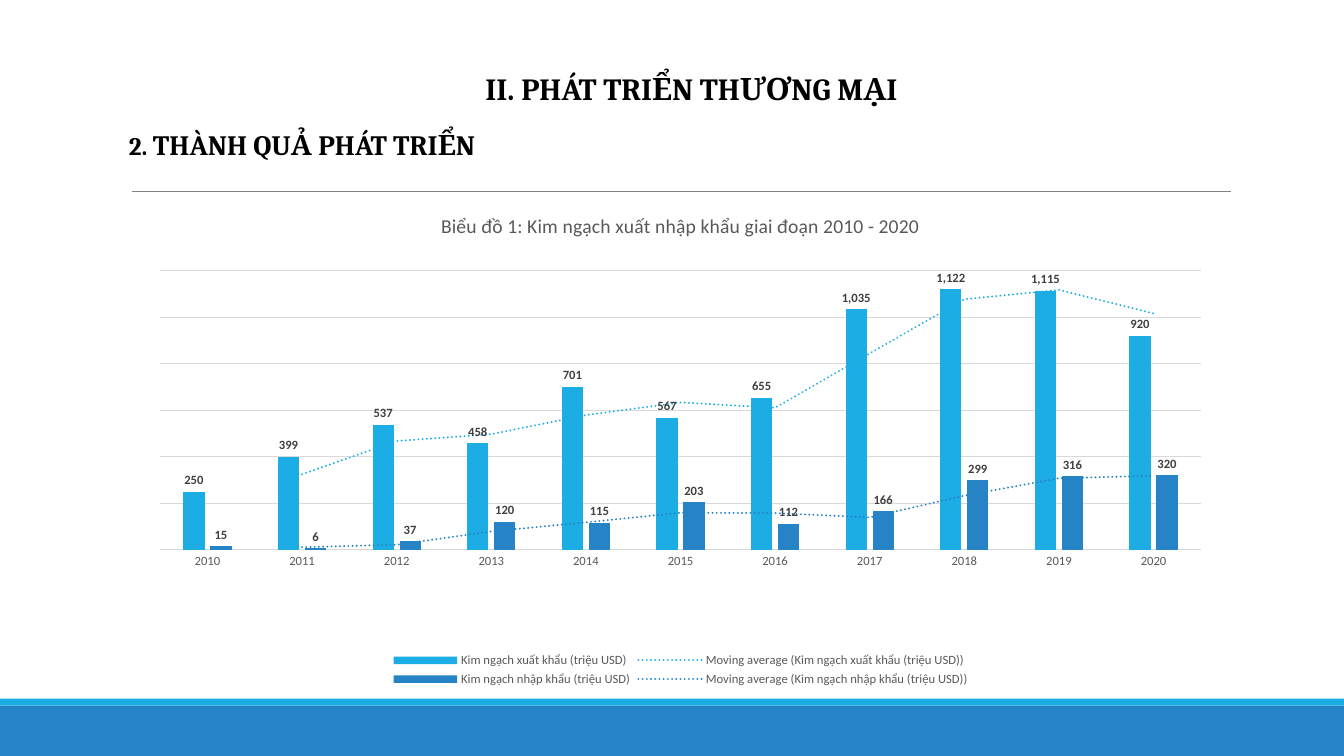
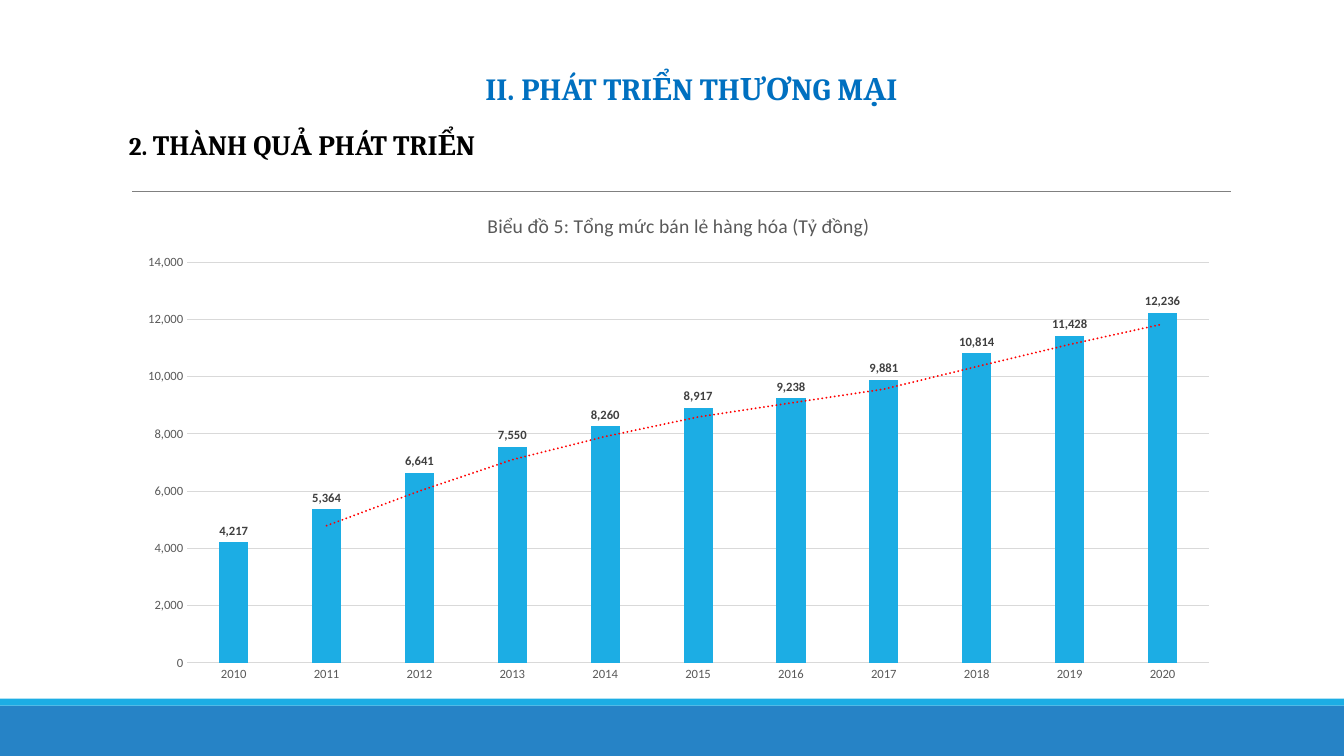
from collections import namedtuple

from lxml import etree
from pptx import Presentation
from pptx.chart.data import CategoryChartData
from pptx.dml.color import RGBColor
from pptx.enum.chart import XL_CHART_TYPE as ChartType
from pptx.enum.chart import XL_LABEL_POSITION as LabelSpot
from pptx.enum.chart import XL_LEGEND_POSITION as LegendSpot
from pptx.enum.chart import XL_TICK_MARK as TickMark
from pptx.enum.shapes import MSO_CONNECTOR as Connector
from pptx.enum.shapes import MSO_SHAPE as Shape
from pptx.enum.text import MSO_AUTO_SIZE as AutoSize
from pptx.enum.text import PP_ALIGN as Align
from pptx.oxml import parse_xml
from pptx.oxml.ns import nsdecls, qn
from pptx.util import Inches, Pt

WIDTH, HEIGHT = Inches(13.33), Inches(7.5)
Box = namedtuple("Box", "left top width height")
COLORS = {
    "black": "000000",
    "heading": "0070C0",
    "light": "1CADE4",
    "dark": "2683C6",
    "red": "FF0000",
    "rule": "808080",
    "grid": "D9D9D9",
    "axis": "595959",
    "label": "404040",
}
YEARS = [str(year) for year in range(2010, 2021)]
AXIS_FONT = {"name": "Calibri", "size": 9, "bold": False, "color": "axis"}
LABEL_FONT = {"name": "Calibri", "size": 9, "bold": True, "color": "label"}
CHART_TITLE_FONT = {"name": "Calibri", "size": 14, "bold": False, "color": "axis"}


def grid_box(left, top, width, height):
    """Turn places on a grid of 100 columns and 100 rows into lengths."""
    column, row = WIDTH / 100, HEIGHT / 100
    return Box(*map(round, (left * column, top * row, width * column, height * row)))


def rgb(name):
    return RGBColor.from_string(COLORS[name])


def style_font(font, style):
    for key, value in style.items():
        if key == "color":
            font.color.rgb = rgb(value)
        else:
            setattr(font, key, Pt(value) if key == "size" else value)


def style_line(line, color, width=0.75):
    line.color.rgb = rgb(color)
    line.width = Pt(width)


def add_band(page, box, color):
    band = page.shapes.add_shape(Shape.RECTANGLE, *box)
    band.shadow.inherit = False
    band.fill.solid()
    band.fill.fore_color.rgb = rgb(color)
    band.line.fill.background()


def add_rule(page, box):
    rule = page.shapes.add_connector(
        Connector.STRAIGHT, box.left, box.top, box.left + box.width, box.top)
    style_line(rule.line, "rule", 0.5)
    etree.SubElement(rule._element.spPr, qn("a:effectLst"))


def add_heading(page, box, spans, color="black", align=Align.LEFT):
    """Write one line of bold Cambria from (text, size) pairs."""
    frame = page.shapes.add_textbox(*box).text_frame
    frame.word_wrap = False
    frame.auto_size = AutoSize.SHAPE_TO_FIT_TEXT
    para = frame.paragraphs[0]
    para.alignment = align
    for text, size in spans:
        span = para.add_run()
        span.text = text
        style_font(span.font, {"name": "Cambria", "size": size, "bold": True, "color": color})


def add_frame(page, title_color):
    """Bands, rule and headings that every page has."""
    add_band(page, grid_box(0, 93.33, 100, 6.67), "dark")
    add_band(page, grid_box(0, 92.4, 100, 0.93), "light")
    add_rule(page, grid_box(9.83, 25.33, 81.77, 0))
    add_heading(page, grid_box(8.85, 16.27, 27.6, 5.87),
                [("2. ", 18), ("THÀNH QUẢ PHÁT TRIỂN", 20)])
    add_heading(page, grid_box(35.18, 8.53, 32.56, 6.27),
                [("II. PHÁT TRIỂN THƯƠNG MẠI", 22)], title_color, Align.CENTER)


def add_trend(series, color):
    """Dotted moving average over two periods, placed before the categories."""
    trend = parse_xml(
        f'<c:trendline {nsdecls("c", "a")}><c:spPr><a:ln w="{Pt(1.5)}" cap="rnd">'
        f'<a:solidFill><a:srgbClr val="{COLORS[color]}"/></a:solidFill>'
        '<a:prstDash val="sysDot"/></a:ln></c:spPr>'
        '<c:trendlineType val="movingAvg"/><c:period val="2"/>'
        '<c:dispRSqr val="0"/><c:dispEq val="0"/></c:trendline>')
    series._element.find(qn("c:cat")).addprevious(trend)


def style_series(series, color, trend_color):
    series.format.fill.solid()
    series.format.fill.fore_color.rgb = rgb(color)
    series.invert_if_negative = False
    labels = series.data_labels
    settings = {"show_value": True, "position": LabelSpot.OUTSIDE_END,
                "number_format": "#,##0", "number_format_is_linked": False}
    for key, value in settings.items():
        setattr(labels, key, value)
    style_font(labels.font, LABEL_FONT)
    add_trend(series, trend_color)


def style_axes(chart, top, step, show_values):
    for axis in (chart.category_axis, chart.value_axis):
        axis.major_tick_mark = axis.minor_tick_mark = TickMark.NONE
        style_font(axis.tick_labels.font, AXIS_FONT)
    style_line(chart.category_axis.format.line, "grid")
    values = chart.value_axis
    values.visible = show_values
    values.minimum_scale, values.maximum_scale, values.major_unit = 0, top, step
    values.tick_labels.number_format = "#,##0"
    values.tick_labels.number_format_is_linked = False
    values.format.line.fill.background()
    style_line(values.major_gridlines.format.line, "grid")


def place_plot(chart, shares):
    """Fix the inner plot area as shares (x, y, w, h) of the chart."""
    area = chart.plots[0]._element.getparent()
    for layout in area.findall(qn("c:layout")):
        area.remove(layout)
    modes = "".join(f'<c:{key}Mode val="edge"/>' for key in "xy")
    sizes = "".join(f'<c:{key} val="{share}"/>' for key, share in zip("xywh", shares))
    area.insert(0, parse_xml(
        f'<c:layout {nsdecls("c")}><c:manualLayout><c:layoutTarget val="inner"/>'
        f'{modes}{sizes}</c:manualLayout></c:layout>'))


def add_legend(chart):
    chart.has_legend = True
    chart.legend.position = LegendSpot.BOTTOM
    chart.legend.include_in_layout = False
    style_font(chart.legend.font, AXIS_FONT)


def add_column_chart(page, box, title, rows, top, step, show_values=True):
    """Columns with trends; rows are (name, values, color, trend color)."""
    data = CategoryChartData(number_format="#,##0")
    data.categories = YEARS
    for name, values, *_ in rows:
        data.add_series(name, values)
    chart = page.shapes.add_chart(ChartType.COLUMN_CLUSTERED, *box, data).chart
    style_font(chart.font, {"name": "Calibri", "size": 10, "color": "black"})
    chart.has_legend = False
    chart.has_title = True
    chart.chart_title.include_in_layout = False
    chart.chart_title.text_frame.text = title
    style_font(chart.chart_title.text_frame.paragraphs[0].runs[0].font, CHART_TITLE_FONT)
    plot = chart.plots[0]
    plot.vary_by_categories = False
    plot.gap_width, plot.overlap = 219, -27
    for series, (_, _, color, trend_color) in zip(plot.series, rows):
        style_series(series, color, trend_color)
    style_axes(chart, top, step, show_values)
    return chart


def trade_page(page):
    add_frame(page, "black")
    exports = [250, 399, 537, 458, 701, 567, 655, 1035, 1122, 1115, 920]
    imports = [15, 6, 37, 120, 115, 203, 112, 166, 299, 316, 320]
    chart = add_column_chart(
        page, grid_box(10.05, 25.6, 81.17, 65.73),
        "Biểu đồ 1: Kim ngạch xuất nhập khẩu giai đoạn 2010 - 2020",
        [("Kim ngạch xuất khẩu (triệu USD)", exports, "light", "light"),
         ("Kim ngạch nhập khẩu (triệu USD)", imports, "dark", "dark")],
        1200, 200, show_values=False)
    place_plot(chart, (0.023, 0.156, 0.954, 0.561))
    add_legend(chart)


def retail_page(page):
    add_frame(page, "heading")
    sales = [4217, 5364, 6641, 7550, 8260, 8917, 9238, 9881, 10814, 11428, 12236]
    add_column_chart(
        page, grid_box(9.38, 25.6, 82.22, 65.87),
        "Biểu đồ 5: Tổng mức bán lẻ hàng hóa (Tỷ đồng)",
        [("Tổng mức bán lẻ", sales, "light", "red")], 14000, 2000)


def main():
    deck = Presentation()
    deck.slide_width, deck.slide_height = WIDTH, HEIGHT
    for build in (trade_page, retail_page):
        build(deck.slides.add_slide(deck.slide_layouts[6]))
    deck.save("out.pptx")


if __name__ == "__main__":
    main()
